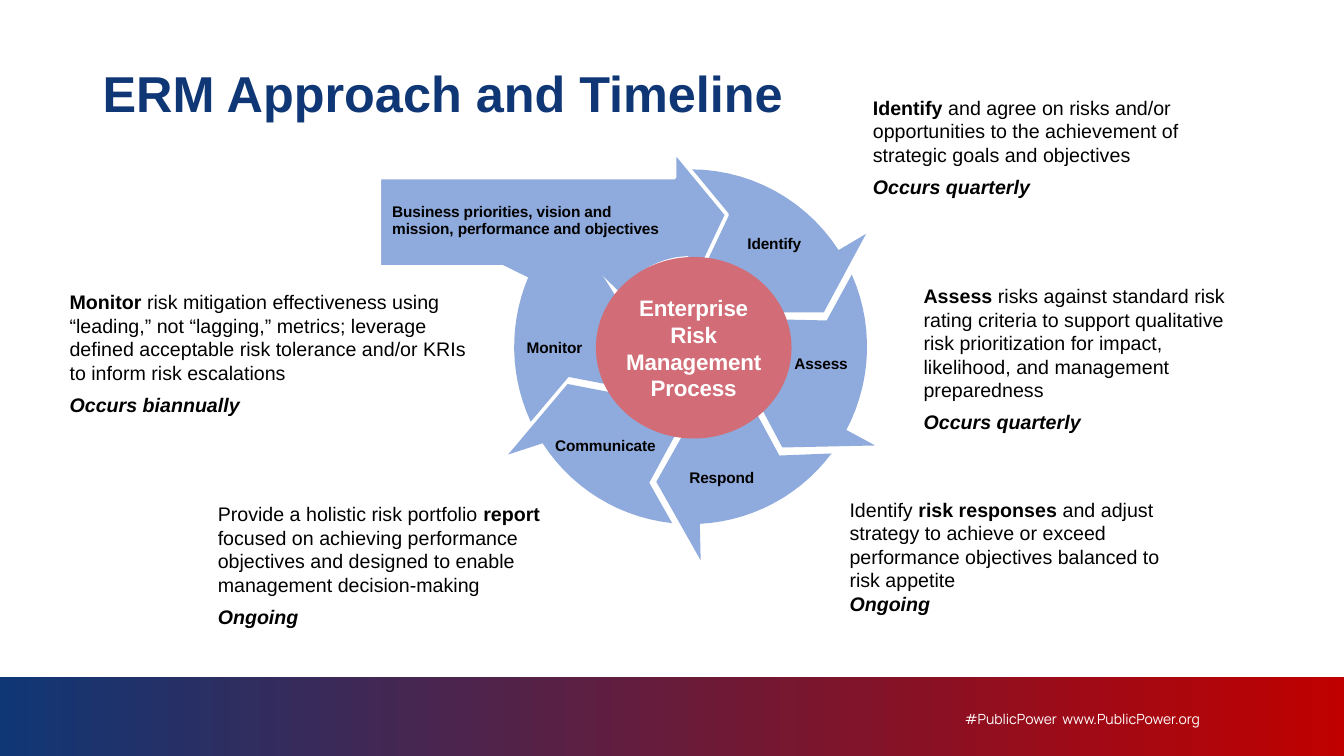
"""Build the ERM approach and timeline slide."""
import math

import pptx
import pptx.dml.color
import pptx.enum.shapes
import pptx.enum.text
import pptx.util

Inches = pptx.util.Inches
Pt = pptx.util.Pt
SHAPE = pptx.enum.shapes.MSO_SHAPE
ALIGN = pptx.enum.text.PP_ALIGN
ANCHOR = pptx.enum.text.MSO_ANCHOR
BOLD = {"bold": True}
BOLD_ITALIC = {"bold": True, "italic": True}


def rgb(value):
    return pptx.dml.color.RGBColor.from_string(value)


def write(shape, paragraphs, size, color="000000", font="Arial", insets=(0, 0, 0, 0),
          anchor=ANCHOR.TOP, align=ALIGN.LEFT, line_spacing=None, gap=0, tracking=None):
    frame = shape.text_frame
    sides = ("margin_left", "margin_top", "margin_right", "margin_bottom")
    layout = {"word_wrap": True, "vertical_anchor": anchor}
    layout.update((side, Inches(inset)) for side, inset in zip(sides, insets))
    for name, value in layout.items():
        setattr(frame, name, value)
    for index, runs in enumerate(paragraphs):
        paragraph = frame.add_paragraph() if index else frame.paragraphs[0]
        paragraph.alignment = align
        if line_spacing:
            paragraph.line_spacing = line_spacing
        if index and gap:
            paragraph.space_before = Pt(gap)
        for text, style in runs:
            run = paragraph.add_run()
            run.text = text
            run.font.color.rgb = rgb(color)
            for name, value in {"name": font, "size": Pt(size), **style}.items():
                setattr(run.font, name, value)
            if tracking:
                run.font._element.set("spc", str(tracking))


deck = pptx.Presentation()
deck.slide_width, deck.slide_height = Inches(13.33), Inches(7.5)
slide = deck.slides.add_slide(deck.slide_layouts[6])
shapes = slide.shapes

footer_band = shapes.add_shape(SHAPE.RECTANGLE, 0, Inches(6.72), Inches(13.33), Inches(0.78))
footer_band.shadow.inherit = False
footer_band.line.fill.background()
footer_band.fill.gradient()
footer_band.fill.gradient_angle = 0
for stop, color in zip(footer_band.fill.gradient_stops, ("103775", "C00000")):
    stop.color.rgb = rgb(color)

footer = shapes.add_textbox(Inches(9.17), Inches(7.05), Inches(2.73), Inches(0.3))
write(footer, [[("#PublicPower  www.PublicPower.org", {})]], 10, "FFFFFF", "Manrope",
      align=ALIGN.RIGHT)

title = shapes.add_textbox(Inches(0.92), Inches(0.4), Inches(11.5), Inches(1.1))
write(title, [[("ERM Approach and Timeline", BOLD)]], 36, "103775",
      insets=(0.1, 0.05, 0.1, 0.05), anchor=ANCHOR.MIDDLE, line_spacing=0.9)

step_notes = [
    ((8.6, 0.85, 3.4, 1.18), 6,
     [("Identify", BOLD),
      (" and agree on risks and/or opportunities to the achievement of strategic goals "
       "and objectives", {})], "Occurs quarterly"),
    ((9.09, 2.71, 3.42, 1.44), 6,
     [("Assess ", BOLD),
      ("risks against standard risk rating criteria to support qualitative risk "
       "prioritization for impact, likelihood, and management preparedness", {})],
     "Occurs quarterly"),
    ((8.36, 4.83, 3.42, 1.35), 0,
     [("Identify ", {}), ("risk responses", BOLD),
      (" and adjust strategy to achieve or exceed performance objectives balanced to "
       "risk appetite", {})], "Ongoing"),
    ((0.62, 2.77, 4.21, 1.44), 6,
     [("Monitor", BOLD),
      (" risk mitigation effectiveness using “leading,” not “lagging,” metrics; leverage "
       "defined acceptable risk tolerance and/or KRIs to inform risk escalations", {})],
     "Occurs biannually"),
    ((2.09, 4.87, 3.93, 1.44), 6,
     [("Provide a holistic risk portfolio", {}), (" report ", BOLD),
      ("focused on achieving performance objectives and designed to enable management "
       "decision-making", {})], "Ongoing"),
]
for box, gap, description, timing in step_notes:
    note = shapes.add_shape(SHAPE.ROUNDED_RECTANGLE, *map(Inches, box))
    note.shadow.inherit = False
    note.fill.background()
    note.line.fill.background()
    write(note, [description, [(timing, BOLD_ITALIC)]], 14, insets=(0, 0.04, 0, 0), gap=gap)

WHEEL_X, WHEEL_Y = 6.85, 3.44
RIM, HUB = (1.75, 1.76), (0.85, 0.88)
ARC_STEPS = 14
wheel_arrows = [
    [(7.24, 3.1), (8.17, 3.1), (8.59, 2.32), (*RIM, 57, 0), (7.19, 2.09), (*HUB, 9, 54)],
    [(3.76, 2.65), (5.86, 2.65), (*HUB, -55, -2), (6.87, 2.85), (7.21, 2.13), (6.69, 1.5),
     (6.69, 1.76), (3.76, 1.76)],
    [(7.76, 4.44), (8.68, 4.42), (*RIM, 118, 66), (8.2, 3.18), (*HUB, 72, 115), (7.35, 3.67)],
    [(6.51, 4.78), (6.95, 5.56), (*RIM, 177, 127), (7.73, 4.52), (*HUB, 133, 173), (6.95, 4)],
    [(5.63, 3.81), (5.04, 4.51), (*RIM, 237, 186), (6.44, 4.79), (*HUB, 190, 225),
     (6.51, 3.98)],
    [(5.9, 2.61), (4.95, 2.61), (*RIM, 293, 245), (5.64, 3.74), (*HUB, 244, 285),
     (6.39, 3.39)],
]
PRIORITIES = 1
for index, outline in enumerate(wheel_arrows):
    points = []
    for part in outline:
        if len(part) == 2:
            points.append(tuple(map(Inches, part)))
            continue
        radius_x, radius_y, start, end = part
        for step in range(ARC_STEPS + 1):
            angle = math.radians(start + (end - start) * step / ARC_STEPS)
            points.append((Inches(WHEEL_X + radius_x * math.sin(angle)),
                           Inches(WHEEL_Y - radius_y * math.cos(angle))))
    builder = shapes.build_freeform(*points[0])
    builder.add_line_segments(points[1:], close=True)
    arrow = builder.convert_to_shape()
    arrow.shadow.inherit = False
    arrow.fill.solid()
    arrow.fill.fore_color.rgb = rgb("8FAADC")
    if index == PRIORITIES:
        arrow.line.color.rgb = rgb("FFFFFF")
        arrow.line.width = Pt(2.75)
    else:
        arrow.line.fill.background()

arrow_labels = [
    ("Communicate", (5.32, 4.21, 1.37, 0.41), ALIGN.CENTER),
    ("Business priorities, vision and mission, performance and objectives",
     (3.86, 1.98, 2.78, 0.43), ALIGN.LEFT),
    ("Assess", (7.61, 3.46, 1.07, 0.29), ALIGN.CENTER),
    ("Monitor", (4.9, 3.3, 1.2, 0.29), ALIGN.CENTER),
    ("Identify", (7.14, 2.27, 1.08, 0.29), ALIGN.CENTER),
    ("Respond", (6.61, 4.59, 1.1, 0.29), ALIGN.CENTER),
]
for text, box, align in arrow_labels:
    label = shapes.add_textbox(*map(Inches, box))
    write(label, [[(text, BOLD)]], 11, insets=(0.03, 0.05, 0.03, 0.05),
          anchor=ANCHOR.MIDDLE, align=align, tracking=-10,
          line_spacing=0.9 if align == ALIGN.LEFT else None)

process_hub = shapes.add_shape(SHAPE.OVAL, *map(Inches, (5.92, 2.56, 1.92, 1.78)))
process_hub.shadow.inherit = False
process_hub.fill.solid()
process_hub.fill.fore_color.rgb = rgb("D26C76")
process_hub.line.color.rgb = rgb("D26C76")
process_hub.line.width = Pt(1.5)
write(process_hub, [[("Enterprise Risk Management Process", BOLD)]], 16, "FFFFFF",
      anchor=ANCHOR.MIDDLE, align=ALIGN.CENTER, tracking=-10)

deck.save("out.pptx")
